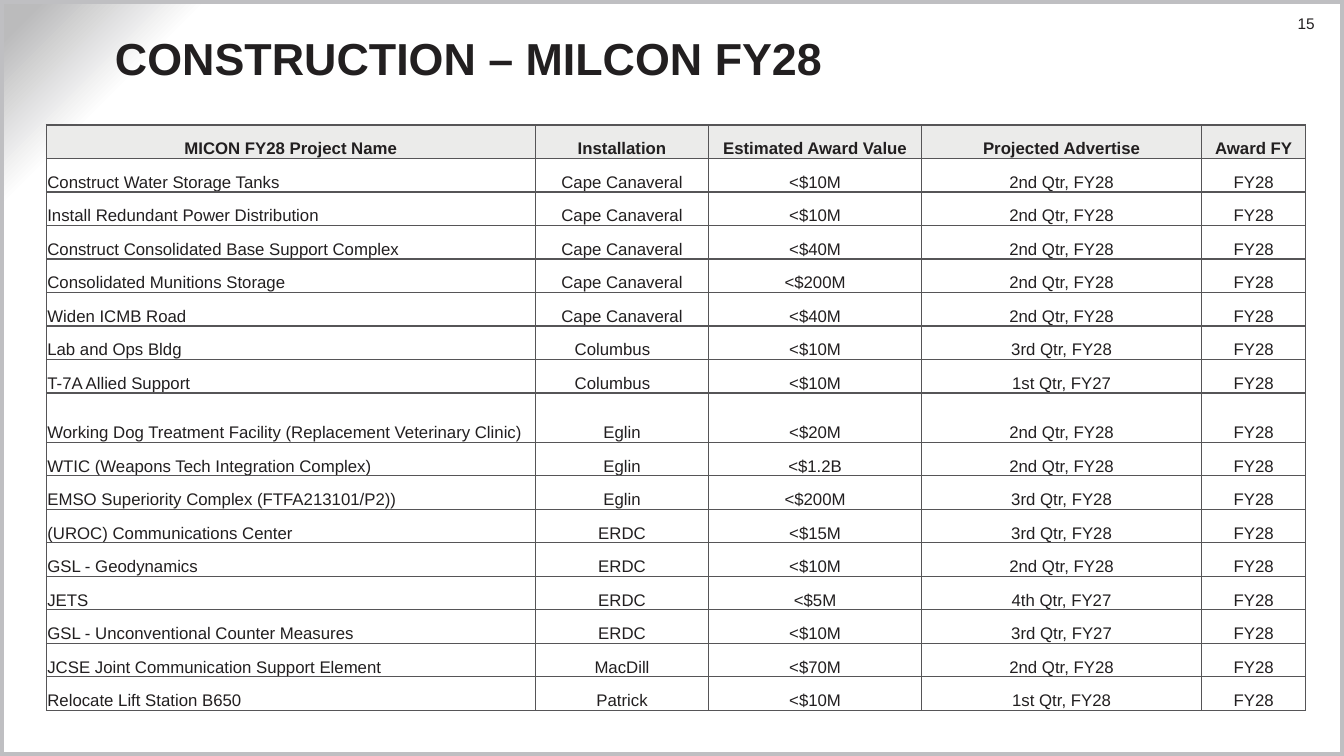
from dataclasses import dataclass
from pptx import Presentation
from pptx.dml.color import RGBColor
from pptx.enum.shapes import MSO_SHAPE
from pptx.enum.text import MSO_ANCHOR, PP_ALIGN
from pptx.oxml import parse_xml
from pptx.oxml.ns import nsdecls, qn
from pptx.util import Inches, Pt


@dataclass(frozen=True)
class Theme:
    font: str = "Arial"
    ink: str = "221F20"
    header_fill: str = "EBEBEA"
    grid: str = "565557"
    frame: str = "BFBFC2"
    white: str = "FFFFFF"
    corner: str = "BBBBBC"
    title_size: int = 32
    table_size: int = 12
    number_size: int = 11


theme = Theme()


def write(frame, text, size, bold=False, align=PP_ALIGN.LEFT,
          anchor=MSO_ANCHOR.TOP, insets=(0.1, 0.05, 0.1, 0.05)):
    """Fill a text frame; insets are left, top, right, bottom in inches."""
    frame.word_wrap = True
    frame.vertical_anchor = anchor
    (frame.margin_left, frame.margin_top,
     frame.margin_right, frame.margin_bottom) = map(Inches, insets)
    paragraph = frame.paragraphs[0]
    paragraph.text = text
    paragraph.alignment = align
    font = paragraph.font
    font.name, font.size, font.bold = theme.font, Pt(size), bold
    font.color.rgb = RGBColor.from_string(theme.ink)


def draw_borders(cell):
    properties = cell._tc.get_or_add_tcPr()
    for position, side in enumerate(("lnL", "lnR", "lnT", "lnB")):
        properties.insert(position, parse_xml(
            f'<a:{side} {nsdecls("a")} w="{Pt(1)}"><a:solidFill>'
            f'<a:srgbClr val="{theme.grid}"/></a:solidFill></a:{side}>'))


presentation = Presentation()
presentation.slide_width, presentation.slide_height = Inches(13.33), Inches(7.5)
slide = presentation.slides.add_slide(presentation.slide_layouts[5])

# Background: white, shading to grey in the top left corner
slide.background.fill.solid()
background = slide.element.find(".//" + qn("p:bgPr"))
stops = "".join(
    f'<a:gs pos="{percent * 1000}"><a:srgbClr val="{color}"/></a:gs>'
    for percent, color in ((87, theme.white), (90, theme.white), (98, theme.corner)))
background.replace(background[0], parse_xml(
    f'<a:gradFill {nsdecls("a")} rotWithShape="1"><a:gsLst>{stops}</a:gsLst>'
    '<a:path path="circle"><a:fillToRect l="100000" t="100000"/></a:path></a:gradFill>'))

border = slide.shapes.add_shape(
    MSO_SHAPE.RECTANGLE, 0, 0, presentation.slide_width, presentation.slide_height)
border.shadow.inherit = False
border.fill.background()
border.line.color.rgb = RGBColor.from_string(theme.frame)
border.line.width = Pt(6)

page_number = slide.shapes.add_textbox(*map(Inches, (12.44, 0.14, 0.6, 0.19)))
write(page_number.text_frame, "15", theme.number_size,
      align=PP_ALIGN.RIGHT, insets=(0.1, 0, 0, 0))

title = slide.shapes.title
title.left, title.top, title.width, title.height = map(Inches, (1.04, 0.25, 11.26, 1.18))
write(title.text_frame, "CONSTRUCTION – MILCON FY28", theme.title_size, bold=True)

# Project table
header = ("MICON FY28 Project Name", "Installation", "Estimated Award Value",
          "Projected Advertise", "Award FY")
projects = (
    ("Construct Water Storage Tanks", "Cape Canaveral", "<$10M", "2nd Qtr, FY28"),
    ("Install Redundant Power Distribution", "Cape Canaveral", "<$10M", "2nd Qtr, FY28"),
    ("Construct Consolidated Base Support Complex", "Cape Canaveral", "<$40M", "2nd Qtr, FY28"),
    ("Consolidated Munitions Storage", "Cape Canaveral", "<$200M", "2nd Qtr, FY28"),
    ("Widen ICMB Road", "Cape Canaveral", "<$40M", "2nd Qtr, FY28"),
    ("Lab and Ops Bldg", "Columbus", "<$10M", "3rd Qtr, FY28"),
    ("T-7A Allied Support", "Columbus", "<$10M", "1st Qtr, FY27"),
    ("Working Dog Treatment Facility (Replacement Veterinary Clinic)",
     "Eglin", "<$20M", "2nd Qtr, FY28"),
    ("WTIC (Weapons Tech Integration Complex)", "Eglin", "<$1.2B", "2nd Qtr, FY28"),
    ("EMSO Superiority Complex (FTFA213101/P2))", "Eglin", "<$200M", "3rd Qtr, FY28"),
    ("(UROC) Communications Center", "ERDC", "<$15M", "3rd Qtr, FY28"),
    ("GSL - Geodynamics", "ERDC", "<$10M", "2nd Qtr, FY28"),
    ("JETS", "ERDC", "<$5M", "4th Qtr, FY27"),
    ("GSL - Unconventional Counter Measures", "ERDC", "<$10M", "3rd Qtr, FY27"),
    ("JCSE Joint Communication Support Element", "MacDill", "<$70M", "2nd Qtr, FY28"),
    ("Relocate Lift Station B650", "Patrick", "<$10M", "1st Qtr, FY28"),
)
rows = [header] + [project + ("FY28",) for project in projects]
column_widths = (4.85, 1.72, 2.11, 2.78, 1.03)
table_height, tall_row, tall_height = 5.81, 8, 0.49
row_height = (table_height - tall_height) / (len(rows) - 1)

table = slide.shapes.add_table(
    len(rows), len(header), Inches(0.46), Inches(1.24),
    Inches(sum(column_widths)), Inches(table_height)).table
for column, width in zip(table.columns, column_widths):
    column.width = Inches(width)
for row_index, values in enumerate(rows):
    is_header = row_index == 0
    table.rows[row_index].height = Inches(
        tall_height if row_index == tall_row else row_height)
    for column_index, value in enumerate(values):
        cell = table.cell(row_index, column_index)
        left_aligned = column_index == 0 and not is_header
        write(cell.text_frame, value, theme.table_size, bold=is_header,
              align=PP_ALIGN.LEFT if left_aligned else PP_ALIGN.CENTER)
        cell.vertical_anchor = MSO_ANCHOR.BOTTOM
        cell.margin_left = cell.margin_top = Inches(0.01)
        cell.margin_right = Inches(0.2 if value == "Columbus" else 0.01)
        cell.margin_bottom = 0
        if is_header:
            cell.fill.solid()
            cell.fill.fore_color.rgb = RGBColor.from_string(theme.header_fill)
        else:
            cell.fill.background()
        draw_borders(cell)

presentation.save("out.pptx")
